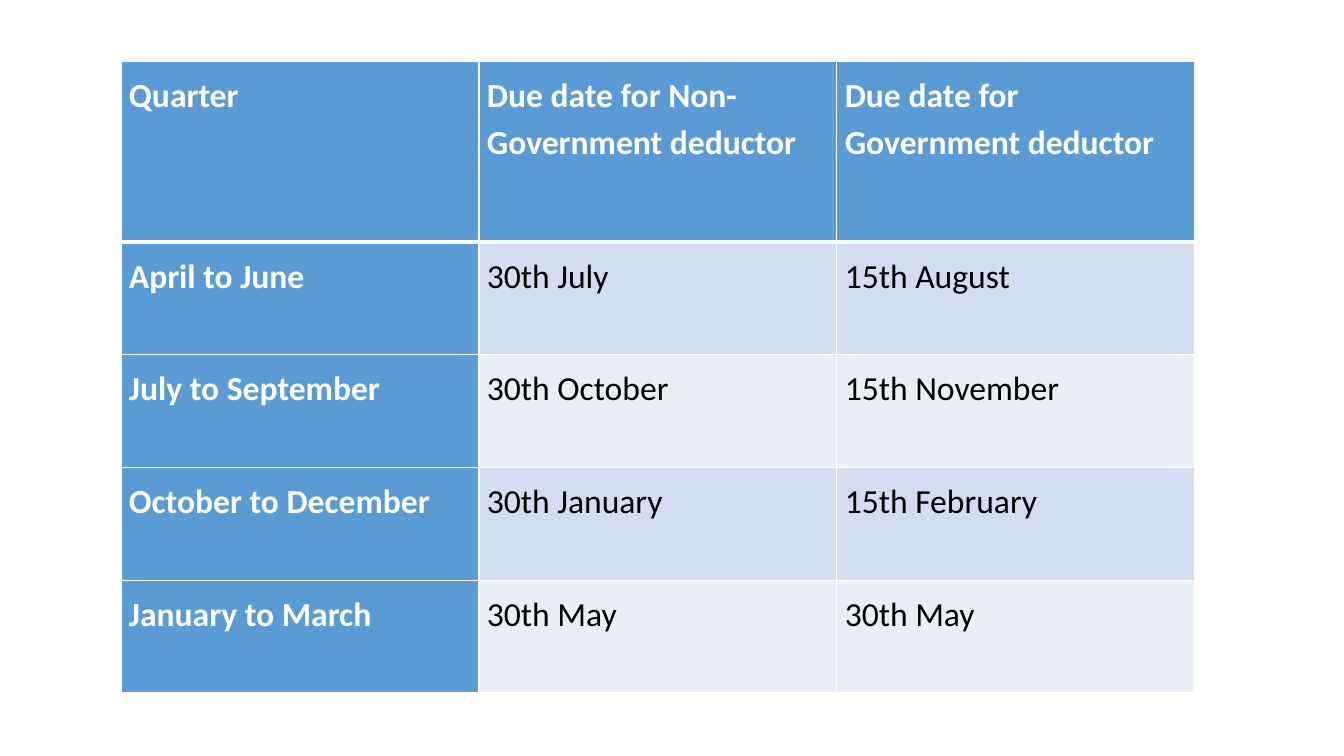
"""Build a slide with the quarterly due dates for both kinds of deductor."""
from dataclasses import dataclass

from lxml.etree import SubElement
from pptx import Presentation
from pptx.dml.color import RGBColor
from pptx.oxml.ns import qn
from pptx.table import _Cell as Cell
from pptx.util import Cm, Pt

WHITE = RGBColor(0xFF, 0xFF, 0xFF)
BLACK = RGBColor(0x00, 0x00, 0x00)
HEADING_BLUE = RGBColor(0x5B, 0x9B, 0xD5)
BAND_DARK = RGBColor(0xD2, 0xDE, 0xEF)
BAND_LIGHT = RGBColor(0xEA, 0xEF, 0xF7)

COLUMN_WIDTH = Cm(9.02)
HEADING_HEIGHT = Cm(4.55)
QUARTER_HEIGHT = Cm(2.84)
CELL_MARGIN = Cm(0.2)
THIN, THICK = Pt(1), Pt(3)


@dataclass(frozen=True)
class DueDates:
    """One row of the schedule."""
    quarter: str
    non_government: str
    government: str


@dataclass(frozen=True)
class CellStyle:
    """Fill, text colour and weight of a cell."""
    fill: RGBColor
    text: RGBColor
    bold: bool


HEADING = CellStyle(HEADING_BLUE, WHITE, True)
BANDS = (CellStyle(BAND_LIGHT, BLACK, False), CellStyle(BAND_DARK, BLACK, False))

SCHEDULE = [
    DueDates("Quarter", "Due date for Non-Government deductor",
             "Due date for Government deductor"),
    DueDates("April to June", "30th July", "15th August"),
    DueDates("July to September", "30th October", "15th November"),
    DueDates("October to December", "30th January", "15th February"),
    DueDates("January to March", "30th May", "30th May"),
]


def draw_borders(cell: Cell, top: Pt, bottom: Pt) -> None:
    """Give a cell white borders on all four sides."""
    properties = cell._tc.get_or_add_tcPr()
    widths = {"a:lnL": THIN, "a:lnR": THIN, "a:lnT": top, "a:lnB": bottom}
    for side, width in widths.items():
        border = SubElement(properties, qn(side), w=str(int(width)))
        fill = SubElement(border, qn("a:solidFill"))
        SubElement(fill, qn("a:srgbClr"), val=str(WHITE))


def fill_cell(cell: Cell, text: str, style: CellStyle) -> None:
    """Write the text of a cell and apply its style."""
    cell.fill.solid()
    cell.fill.fore_color.rgb = style.fill
    cell.margin_left = cell.margin_right = CELL_MARGIN
    cell.margin_top = cell.margin_bottom = CELL_MARGIN
    cell.text_frame.text = text
    paragraph = cell.text_frame.paragraphs[0]
    paragraph.line_spacing = 1.15
    paragraph.space_before = paragraph.space_after = Pt(15)
    font = paragraph.runs[0].font
    font.name = "Calibri"
    font.size = Pt(24)
    font.bold = style.bold
    font.color.rgb = style.text


def main() -> None:
    """Create the presentation and save it."""
    presentation = Presentation()
    presentation.slide_width = Cm(33.87)
    presentation.slide_height = Cm(19.05)
    slide = presentation.slides.add_slide(presentation.slide_layouts[6])

    schedule = slide.shapes.add_table(
        len(SCHEDULE), 3, Cm(3.05), Cm(1.55), 3 * COLUMN_WIDTH,
        HEADING_HEIGHT + (len(SCHEDULE) - 1) * QUARTER_HEIGHT).table
    schedule.first_col = True
    for column in schedule.columns:
        column.width = COLUMN_WIDTH

    for row, dates in enumerate(SCHEDULE):
        schedule.rows[row].height = QUARTER_HEIGHT if row else HEADING_HEIGHT
        texts = (dates.quarter, dates.non_government, dates.government)
        for column, text in enumerate(texts):
            cell = schedule.cell(row, column)
            draw_borders(cell, top=THICK if row == 1 else THIN,
                         bottom=THICK if row == 0 else THIN)
            is_heading = row == 0 or column == 0
            fill_cell(cell, text, HEADING if is_heading else BANDS[row % 2])

    presentation.save("out.pptx")


if __name__ == "__main__":
    main()
